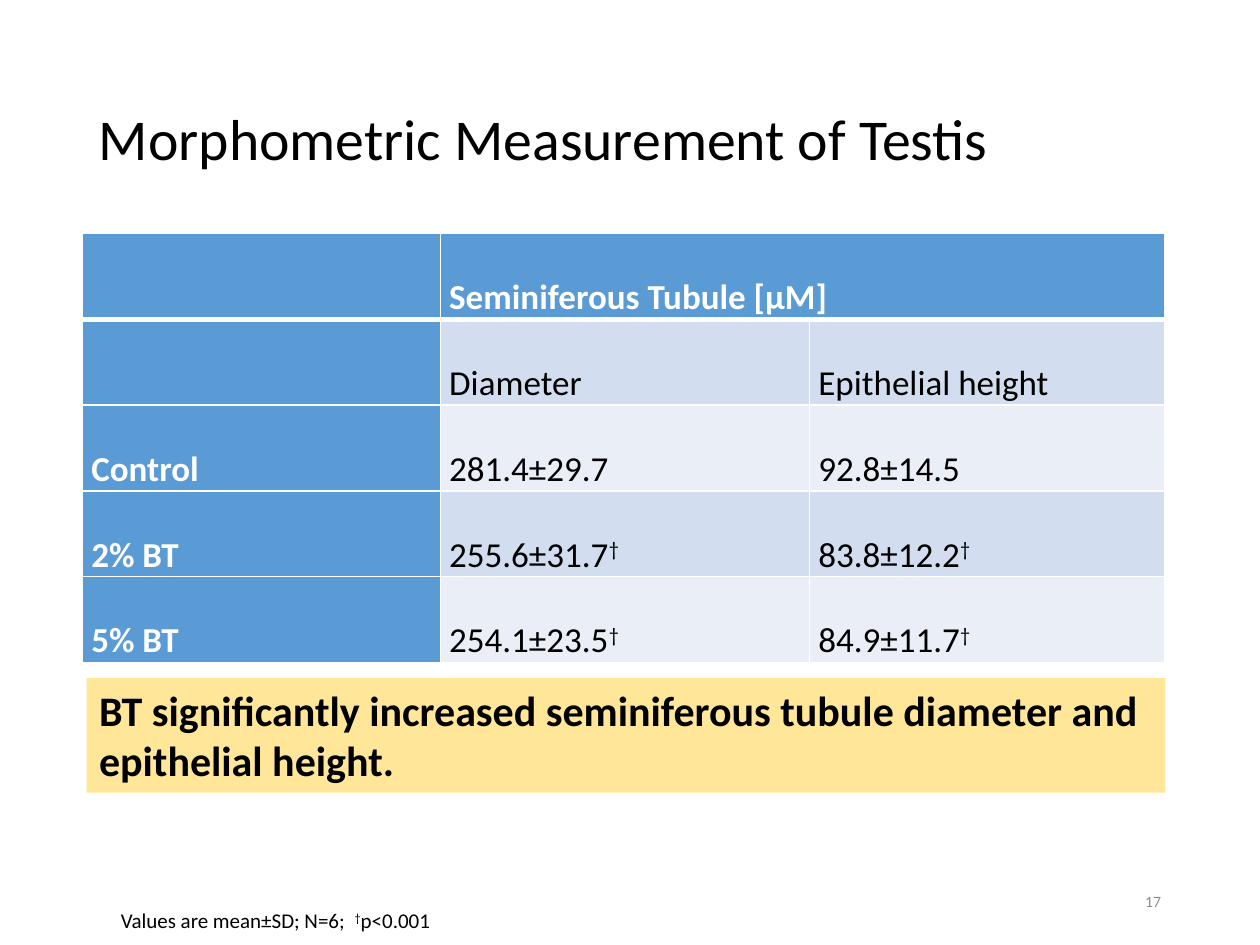
from dataclasses import dataclass

from lxml import etree
from pptx import Presentation
from pptx import util as u
from pptx.dml.color import RGBColor
from pptx.enum import shapes, text
from pptx.oxml import ns

Pt = u.Pt
FONT = "Calibri"
BLACK = RGBColor(0x00, 0x00, 0x00)
WHITE = RGBColor(0xFF, 0xFF, 0xFF)
GRAY = RGBColor(0x8C, 0x8C, 0x8C)
BLUE = RGBColor(0x5B, 0x9B, 0xD5)
BANDS = (RGBColor(0xEA, 0xEF, 0xF7), RGBColor(0xD2, 0xDE, 0xEF))
YELLOW = RGBColor(0xFF, 0xE6, 0x99)

DAGGER = "†"
COLUMN_WIDTHS = (204.5, 211, 203)
ROW_HEIGHT = 48.8
ROWS = (
    ("", "Seminiferous Tubule [µM]", ""),
    ("", "Diameter", "Epithelial height"),
    ("Control", "281.4±29.7", "92.8±14.5"),
    ("2% BT", "255.6±31.7†", "83.8±12.2†"),
    ("5% BT", "254.1±23.5†", "84.9±11.7†"),
)


@dataclass(frozen=True)
class Label:
    text: str
    left: float
    top: float
    width: float
    height: float
    size: float
    color: RGBColor = BLACK
    bold: bool = False
    align: text.PP_ALIGN = text.PP_ALIGN.LEFT
    anchor: text.MSO_ANCHOR = text.MSO_ANCHOR.TOP
    spacing: float = 1.0
    fill: RGBColor | None = None


LABELS = (
    Label("Morphometric Measurement of Testis", 49.5, 28.8, 621, 104.4, 33,
          anchor=text.MSO_ANCHOR.MIDDLE, spacing=0.9),
    Label("17", 508.5, 500.5, 162, 28.8, 9, GRAY,
          align=text.PP_ALIGN.RIGHT, anchor=text.MSO_ANCHOR.MIDDLE),
    Label("BT significantly increased seminiferous tubule diameter and "
          "epithelial height.", 49.5, 387.5, 616.5, 65.5, 24, bold=True, fill=YELLOW),
    Label("Values are mean±SD; N=6;  †p<0.001", 62, 515, 571, 21.8, 12),
)


def write(para, content: str, size: float, color: RGBColor, bold: bool) -> None:
    """Fill a paragraph, raising every dagger to a superscript."""
    before, dagger, after = content.partition(DAGGER)
    for part in filter(None, (before, dagger, after)):
        span = para.add_run()
        span.text = part
        span.font.name = FONT
        span.font.size = Pt(size)
        span.font.bold = bold
        span.font.color.rgb = color
        if part == DAGGER:
            span.font._element.set("baseline", "30000")


def add_label(page, label: Label) -> None:
    place = [Pt(n) for n in (label.left, label.top, label.width, label.height)]
    if label.fill is None:
        box = page.shapes.add_textbox(*place)
    else:
        box = page.shapes.add_shape(shapes.MSO_SHAPE.RECTANGLE, *place)
        box.shadow.inherit = False
        box.fill.solid()
        box.fill.fore_color.rgb = label.fill
        box.line.fill.background()
    frame = box.text_frame
    frame.word_wrap = True
    frame.vertical_anchor = label.anchor
    para = frame.paragraphs[0]
    para.alignment = label.align
    para.line_spacing = label.spacing
    write(para, label.text, label.size, label.color, label.bold)


def set_borders(cell, top: float, bottom: float) -> None:
    """Draw white cell borders; the side ones are one point wide."""
    properties = cell._tc.get_or_add_tcPr()
    widths = {"lnL": 1, "lnR": 1, "lnT": top, "lnB": bottom}
    for index, (side, width) in enumerate(widths.items()):
        line = etree.Element(ns.qn(f"a:{side}"), w=str(Pt(width)))
        fill = etree.SubElement(line, ns.qn("a:solidFill"))
        etree.SubElement(fill, ns.qn("a:srgbClr"), val=str(WHITE))
        properties.insert(index, line)


def add_measurements(page) -> None:
    frame = page.shapes.add_table(
        len(ROWS), len(COLUMN_WIDTHS), Pt(47.2), Pt(133.5),
        Pt(sum(COLUMN_WIDTHS)), Pt(ROW_HEIGHT * len(ROWS)))
    table = frame.table
    table.first_col = True
    for column, width in zip(table.columns, COLUMN_WIDTHS):
        column.width = Pt(width)
    for r, values in enumerate(ROWS):
        table.rows[r].height = Pt(ROW_HEIGHT)
        for c, value in enumerate(values):
            cell = table.cell(r, c)
            heading = r == 0 or c == 0
            cell.fill.solid()
            cell.fill.fore_color.rgb = BLUE if heading else BANDS[r % 2]
            set_borders(cell, 3 if r == 1 else 1, 3 if r == 0 else 1)
            cell.margin_left = cell.margin_right = Pt(5)
            cell.margin_top = cell.margin_bottom = Pt(0)
            if value:
                para = cell.text_frame.paragraphs[0]
                para.alignment = text.PP_ALIGN.JUSTIFY
                para.line_spacing = 2.0
                write(para, value, 20, WHITE if heading else BLACK, heading)
    table.cell(0, 1).merge(table.cell(0, 2))


def main() -> None:
    deck = Presentation()
    deck.slide_width, deck.slide_height = Pt(720), Pt(540)
    page = deck.slides.add_slide(deck.slide_layouts[6])
    add_measurements(page)
    for label in LABELS:
        add_label(page, label)
    deck.save("out.pptx")


if __name__ == "__main__":
    main()
